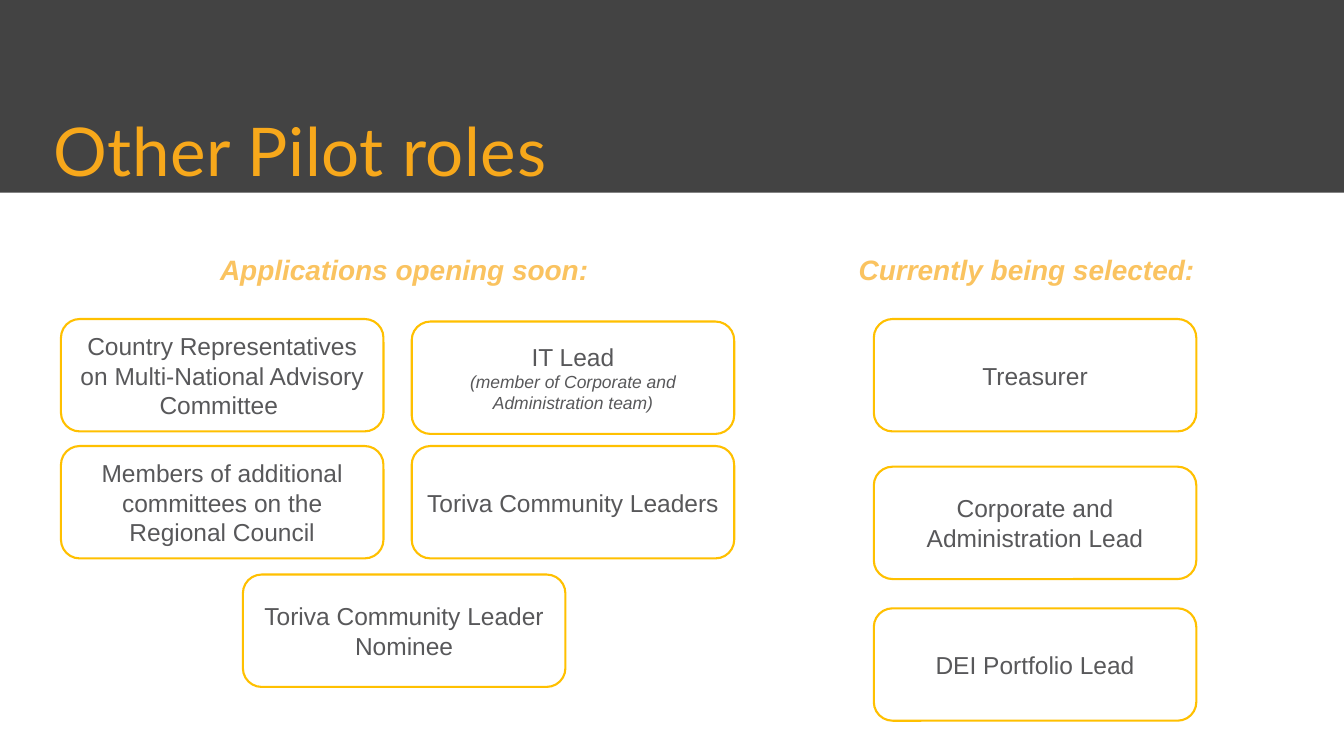
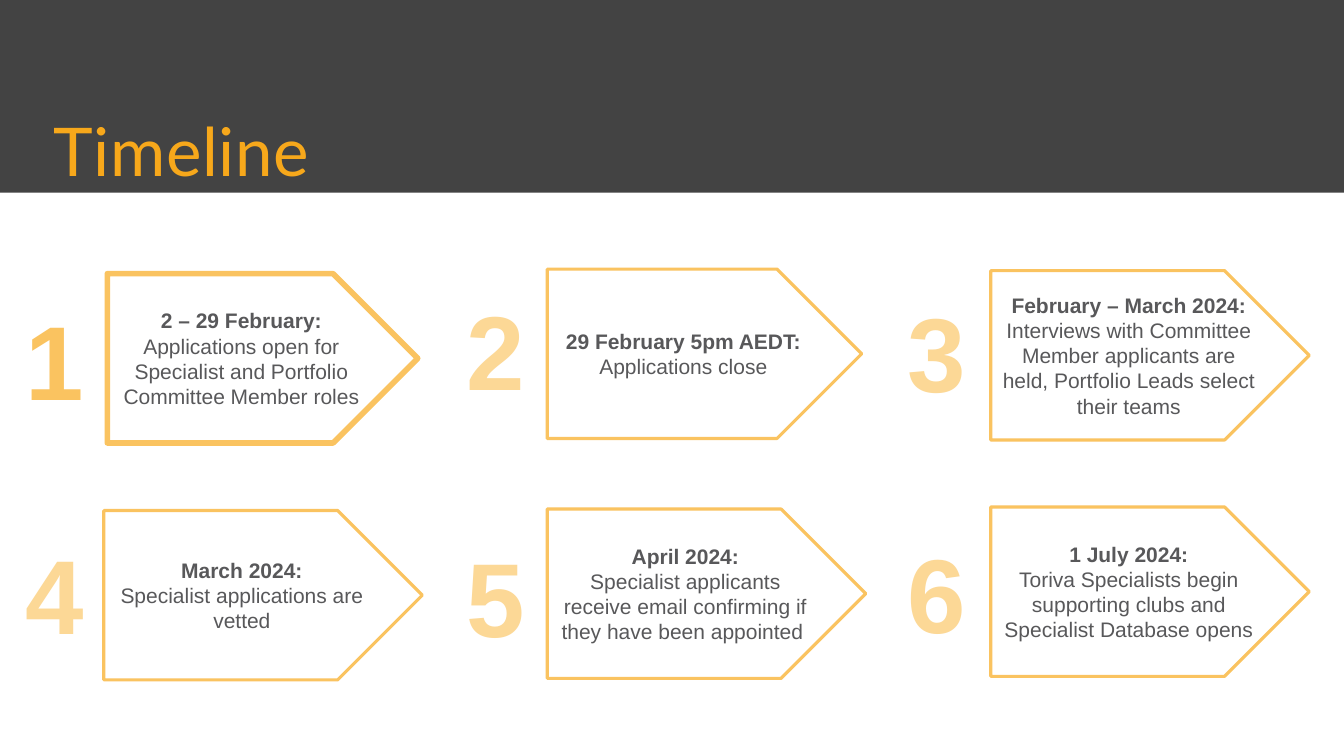
from dataclasses import dataclass

from pptx import Presentation
from pptx.dml.color import RGBColor
from pptx.enum.shapes import MSO_SHAPE
from pptx.enum.text import MSO_ANCHOR, PP_ALIGN
from pptx.util import Inches, Pt

RECT = MSO_SHAPE.RECTANGLE
ROUND = MSO_SHAPE.ROUNDED_RECTANGLE
PLATE = MSO_SHAPE.PENTAGON
MIDDLE = MSO_ANCHOR.MIDDLE
LEFT, CENTER = PP_ALIGN.LEFT, PP_ALIGN.CENTER


@dataclass(frozen=True)
class Theme:
    band: str = "434343"
    gold: str = "F7A81B"
    edge: str = "FFC000"
    amber: str = "FAC360"
    pale: str = "FCD896"
    ink: str = "58585A"
    white: str = "FFFFFF"
    head: str = "Lato"
    body: str = "Arial"
    title: int = 96
    label: int = 40
    role: int = 35
    note: int = 25
    step: int = 30
    digit: int = 150


T = Theme()
WIDTH, HEIGHT = 26.67, 15
ROLE_W, ROLE_H = 6.4, 2.23
STEP_H = 3.36
DIGIT_X, DIGIT_GAP = 0.3, 8.75

ROLES = [
    (1.21, 6.33, "Country Representatives on Multi-National Advisory Committee ", ""),
    (8.17, 6.38, "IT Lead", "(member of Corporate and Administration team)"),
    (1.21, 8.85, "Members of additional committees on the Regional Council", ""),
    (8.17, 8.85, "Toriva Community Leaders", ""),
    (4.82, 11.4, "Toriva Community Leader Nominee", ""),
    (17.34, 6.33, "Treasurer", ""),
    (17.34, 9.26, "Corporate and Administration Lead", ""),
    (17.34, 12.07, "DEI Portfolio Lead", ""),
]

# Plate left, top and width, digit top, date, text
STEPS = [
    (2.13, 5.43, 6.16, 5.79, "2 – 29 February:",
     "Applications open for Specialist and Portfolio Committee Member roles"),
    (10.86, 5.34, 6.24, 5.59, "29 February 5pm AEDT:", "Applications close"),
    (19.66, 5.37, 6.32, 5.63, "February – March 2024:",
     "Interviews with Committee Member applicants are held, "
     "Portfolio Leads select their teams"),
    (2.06, 10.13, 6.32, 10.43, "March 2024:", "Specialist applications are vetted"),
    (10.86, 10.1, 6.32, 10.49, "April 2024:",
     "Specialist applicants receive email confirming if they have been appointed "),
    (19.66, 10.06, 6.32, 10.41, "1 July 2024:",
     "Toriva Specialists begin supporting clubs and Specialist Database opens"),
]


def color(code):
    return RGBColor.from_string(code)


def set_frame(shape, side, top):
    """Wrap and centre the text vertically, with the given margins."""
    frame = shape.text_frame
    frame.word_wrap = True
    frame.vertical_anchor = MIDDLE
    frame.margin_left = frame.margin_right = Inches(side)
    frame.margin_top = frame.margin_bottom = Inches(top)
    return frame


def add_run(para, text, size, tint, bold=False, italic=False, face=T.body):
    run = para.add_run()
    run.text = text
    font = run.font
    font.name, font.size = face, Pt(size)
    font.bold, font.italic = bold, italic
    font.color.rgb = color(tint)
    return run


def add_text(slide, box, text, size, tint, align=CENTER, **style):
    shape = slide.shapes.add_textbox(*map(Inches, box))
    para = set_frame(shape, 0.06, 0.06).paragraphs[0]
    para.alignment = align
    return para, add_run(para, text, size, tint, **style)


def add_box(slide, kind, box, fill=None, line=None, weight=0):
    shape = slide.shapes.add_shape(kind, *map(Inches, box))
    shape.shadow.inherit = False
    if fill:
        shape.fill.solid()
        shape.fill.fore_color.rgb = color(fill)
    else:
        shape.fill.background()
    if line:
        shape.line.color.rgb = color(line)
        shape.line.width = Pt(weight)
    else:
        shape.line.fill.background()
    return shape


def add_slide(deck, title):
    """Add a blank slide with the shared band and title."""
    slide = deck.slides.add_slide(deck.slide_layouts[6])
    add_box(slide, RECT, (0, 0, WIDTH, 3.82), T.band)
    para, run = add_text(slide, (0, 2.5, 24.39, 1.32), title, T.title, T.gold,
                         LEFT, face=T.head)
    para.line_spacing = 0.7
    props = para._p.get_or_add_pPr()
    props.set("marL", str(Inches(1)))
    props.set("indent", "0")
    run.font._element.set("spc", "90")
    return slide


def add_role(slide, left, top, name, note):
    shape = add_box(slide, ROUND, (left, top, ROLE_W, ROLE_H), line=T.edge, weight=3)
    frame = set_frame(shape, 0.1, 0.39)
    para = frame.paragraphs[0]
    para.alignment = CENTER
    add_run(para, name, T.role, T.ink)
    if note:
        para = frame.add_paragraph()
        para.alignment = CENTER
        add_run(para, note, T.note, T.ink, italic=True)


def add_step(slide, index, left, top, width, rise, date, text):
    """Add a digit and its plate; the first step is the current one."""
    now = index == 0
    box = (DIGIT_X + index % 3 * DIGIT_GAP, rise, 1.57, 2.64)
    add_text(slide, box, str(index + 1), T.digit, T.amber if now else T.pale, bold=True)
    shape = add_box(slide, PLATE, (left, top, width, STEP_H), T.white, T.amber,
                    8 if now else 4.5)
    frame = set_frame(shape, 0.2, 0.79)
    first, second = frame.paragraphs[0], frame.add_paragraph()
    first.alignment = second.alignment = CENTER
    add_run(first, date, T.step, T.ink, bold=True)
    add_run(second, text, T.step, T.ink)


def main():
    deck = Presentation()
    deck.slide_width, deck.slide_height = Inches(WIDTH), Inches(HEIGHT)

    slide = add_slide(deck, "Other Pilot roles")
    for left, label in ((3.59, "Applications opening soon:"),
                        (15.94, "Currently being selected:")):
        add_text(slide, (left, 4.95, 8.86, 0.79), label, T.label, T.amber,
                 bold=True, italic=True)
    for role in ROLES:
        add_role(slide, *role)

    slide = add_slide(deck, "Timeline")
    for index, step in enumerate(STEPS):
        add_step(slide, index, *step)

    deck.save("out.pptx")


if __name__ == "__main__":
    main()
